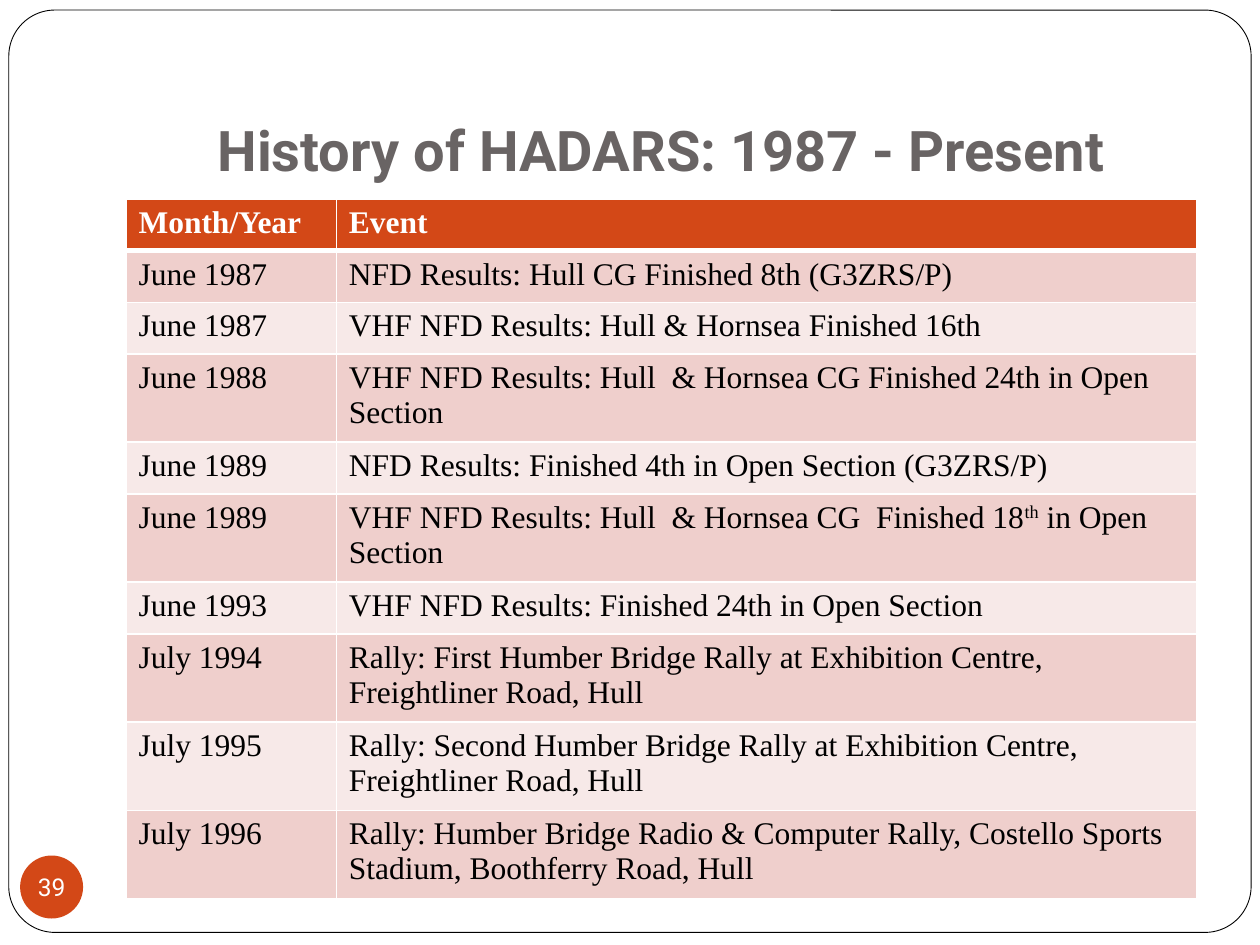
from lxml import etree
from pptx import Presentation
from pptx import util as u
from pptx.dml.color import RGBColor
from pptx.enum import shapes, text
from pptx.oxml.ns import qn

TITLE = "History of HADARS: 1987 - Present"
PAGE_NUMBER = "39"
HEADER = ("Month/Year", "Event")
# An event is a string, or a tuple whose odd pieces are superscript
EVENTS = [
    ("June 1987", "NFD Results: Hull CG Finished 8th (G3ZRS/P)"),
    ("June 1987", "VHF NFD Results: Hull & Hornsea Finished 16th"),
    ("June 1988", "VHF NFD Results: Hull  & Hornsea CG Finished 24th in Open Section"),
    ("June 1989", "NFD Results: Finished 4th in Open Section (G3ZRS/P)"),
    ("June 1989", ("VHF NFD Results: Hull  & Hornsea CG  Finished 18", "th", " in Open Section")),
    ("June 1993", "VHF NFD Results: Finished 24th in Open Section"),
    ("July 1994", "Rally: First Humber Bridge Rally at Exhibition Centre, Freightliner Road, Hull"),
    ("July 1995", "Rally: Second Humber Bridge Rally at Exhibition Centre, Freightliner Road, Hull"),
    ("July 1996", "Rally: Humber Bridge Radio & Computer Rally, Costello Sports Stadium, "
                  "Boothferry Road, Hull"),
]
COLUMN_WIDTHS = (1.67, 6.83)
ROW_HEIGHT = 0.41

THEME = {
    "paper": "FFFFFF", "ink": "000000", "title": "696464", "accent": "D34817",
    "bands": ("EFCFCC", "F7E9E8"),
    "heading_font": "Roboto", "body_font": "Times New Roman",
    "title_size": 32, "table_size": 18, "number_size": 14,
}


def color(name):
    return RGBColor.from_string(THEME.get(name, name))


def write(frame, content, *, font, size, ink, bold=False, align=text.PP_ALIGN.LEFT):
    """Write one paragraph; odd pieces of a tuple become superscript."""
    para = frame.paragraphs[0]
    para.alignment = align
    pieces = (content,) if isinstance(content, str) else content
    for index, piece in enumerate(pieces):
        span = para.add_run()
        span.text = piece
        span.font.name = THEME[font]
        span.font.size = u.Pt(THEME[size])
        span.font.bold = bold
        span.font.color.rgb = color(ink)
        if index % 2:
            span._r.get_or_add_rPr().set("baseline", "30000")


def set_frame(frame, anchor, margins, wrap):
    frame.word_wrap = wrap
    frame.vertical_anchor = anchor
    (frame.margin_left, frame.margin_top,
     frame.margin_right, frame.margin_bottom) = map(u.Inches, margins)


def add_panel(page, kind, at, fill):
    panel = page.shapes.add_shape(kind, *map(u.Inches, at))
    panel.shadow.inherit = False
    panel.fill.solid()
    panel.fill.fore_color.rgb = color(fill)
    panel.line.fill.background()
    return panel


def style_cell(cell, fill, bottom_width):
    """Draw white borders, then fill the cell."""
    properties = cell._tc.get_or_add_tcPr()
    for side, width in (("L", 1), ("R", 1), ("T", 1), ("B", bottom_width)):
        line = etree.SubElement(properties, qn(f"a:ln{side}"), w=str(u.Pt(width)))
        solid = etree.SubElement(line, qn("a:solidFill"))
        etree.SubElement(solid, qn("a:srgbClr"), val=THEME["paper"])
    cell.fill.solid()
    cell.fill.fore_color.rgb = color(fill)


def add_history(page):
    rows = [HEADER, *EVENTS]
    table = page.shapes.add_table(
        len(rows), len(HEADER), u.Inches(1), u.Inches(1.58),
        u.Inches(sum(COLUMN_WIDTHS)), u.Inches(ROW_HEIGHT * len(rows))).table
    for column, width in zip(table.columns, COLUMN_WIDTHS):
        column.width = u.Inches(width)
    for r, row in enumerate(rows):
        table.rows[r].height = u.Inches(ROW_HEIGHT)
        header = r == 0
        fill = "accent" if header else THEME["bands"][(r - 1) % 2]
        for c, content in enumerate(row):
            cell = table.cell(r, c)
            style_cell(cell, fill, 3 if header else 1)
            write(cell.text_frame, content, font="body_font", size="table_size",
                  ink="paper" if header else "ink", bold=header)


def main():
    deck = Presentation()
    deck.slide_width, deck.slide_height = u.Inches(10), u.Inches(7.5)
    page = deck.slides.add_slide(deck.slide_layouts[6])

    # Rounded page frame
    border = add_panel(page, shapes.MSO_SHAPE.ROUNDED_RECTANGLE, (0.07, 0.08, 9.86, 7.32), "paper")
    border.adjustments[0] = 0.05
    border.line.color.rgb = color("ink")
    border.line.width = u.Pt(0.5)

    # Title
    box = page.shapes.add_textbox(*map(u.Inches, (1, 0.3, 8.5, 1.25)))
    set_frame(box.text_frame, text.MSO_ANCHOR.BOTTOM, (0.1, 0.05, 0.1, 0.1), True)
    write(box.text_frame, TITLE, font="heading_font", size="title_size", ink="title",
          bold=True, align=text.PP_ALIGN.CENTER)

    # Table of events
    add_history(page)

    # Page number badge
    badge = add_panel(page, shapes.MSO_SHAPE.OVAL, (0.16, 6.79, 0.5, 0.5), "accent")
    set_frame(badge.text_frame, text.MSO_ANCHOR.MIDDLE, (0, 0, 0, 0), False)
    write(badge.text_frame, PAGE_NUMBER, font="heading_font", size="number_size",
          ink="paper", align=text.PP_ALIGN.CENTER)

    deck.save("out.pptx")


if __name__ == "__main__":
    main()
